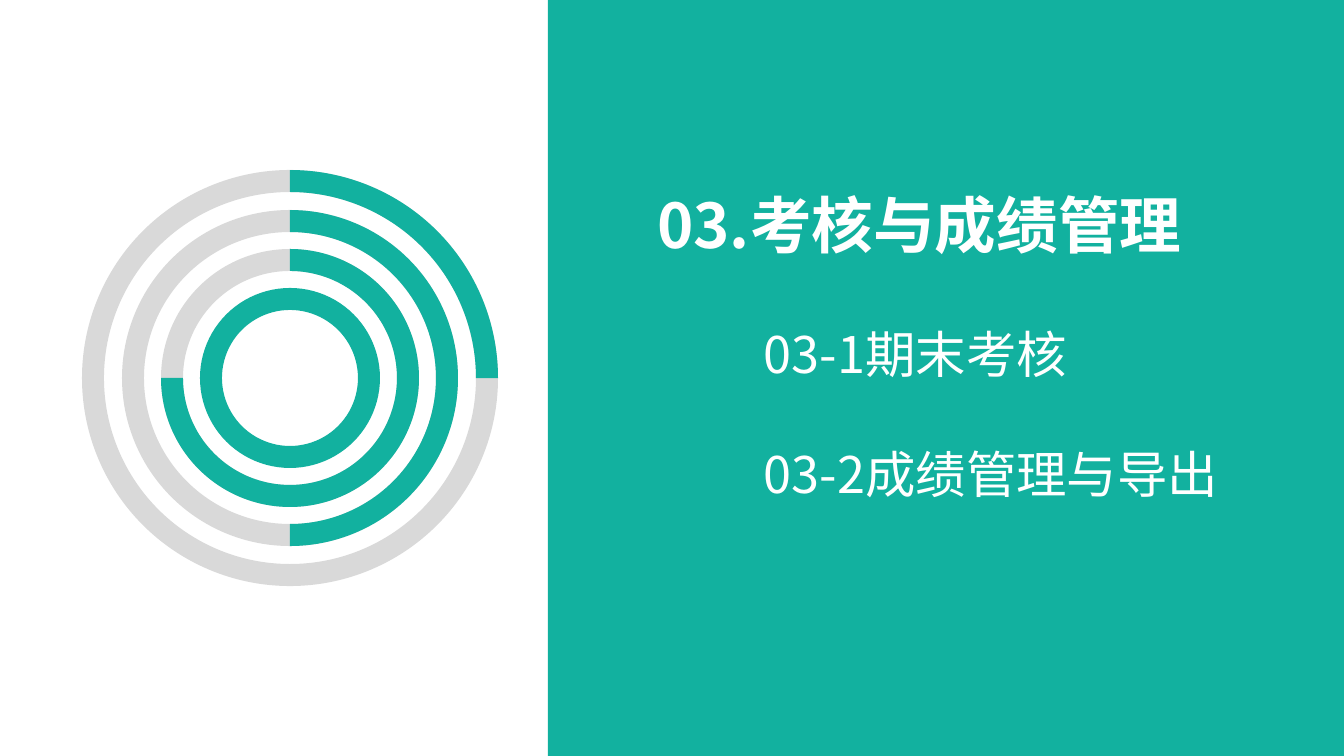
from dataclasses import dataclass

from lxml import etree
from pptx import Presentation
from pptx.dml.color import RGBColor
from pptx.enum.shapes import MSO_SHAPE
from pptx.enum.text import PP_ALIGN
from pptx.oxml.ns import qn
from pptx.util import Emu, Pt

RECT = MSO_SHAPE.RECTANGLE
DONUT = MSO_SHAPE.DONUT
ARC = MSO_SHAPE.BLOCK_ARC
LEFT, CENTER = PP_ALIGN.LEFT, PP_ALIGN.CENTER

SCALE = 914400 / 100.8  # EMU in one px
WIDTH, HEIGHT = 1344, 756
SPLIT = 548
HUB_X, HUB_Y = 290, 378
BAND = 22
TEAL, GREY, WHITE = "12B19F", "D9D9D9", "FFFFFF"
FONT = "Noto Sans CJK SC"


@dataclass
class Ring:
    radius: int
    sweep: int  # degrees filled, clockwise from the top


@dataclass
class Label:
    left: int
    top: int
    width: int
    height: int
    lines: list[str]
    size: int
    pitch: int  # line height in points
    gap: int = 0  # points between paragraphs
    bold: bool = False
    align: PP_ALIGN = LEFT


RINGS = [Ring(208, 90), Ring(168, 180), Ring(129, 270), Ring(90, 360)]
LABELS = [
    Label(754, 318, 590, 194, ["03-1期末考核", "03-2成绩管理与导出"], 36, 43, gap=43),
    Label(577, 182, 685, 85, ["03.考核与成绩管理"], 44, 53, bold=True, align=CENTER),
]


def px(value: int) -> Emu:
    return Emu(round(value * SCALE))


def color(code: str) -> RGBColor:
    return RGBColor.from_string(code)


def add_form(slide, kind, left: int, top: int, width: int, height: int, fill: str):
    form = slide.shapes.add_shape(kind, px(left), px(top), px(width), px(height))
    form.shadow.inherit = False
    form.fill.solid()
    form.fill.fore_color.rgb = color(fill)
    form.line.fill.background()
    return form


def add_ring(slide, ring: Ring) -> None:
    side = 2 * ring.radius
    box = (HUB_X - ring.radius, HUB_Y - ring.radius, side, side)
    full = ring.sweep == 360
    base = add_form(slide, DONUT, *box, TEAL if full else GREY)
    base.adjustments[0] = BAND / side
    if not full:
        arc = add_form(slide, ARC, *box, TEAL)
        # Angles are stored in 60000ths of a degree, adjustments in 100000ths
        arc.adjustments[0] = 270 * 0.6
        arc.adjustments[1] = (270 + ring.sweep) % 360 * 0.6
        arc.adjustments[2] = BAND / side


def add_label(slide, label: Label) -> None:
    box = slide.shapes.add_textbox(
        px(label.left), px(label.top), px(label.width), px(label.height)
    )
    frame = box.text_frame
    frame.word_wrap = True
    frame.text = "\n".join(label.lines)
    for index, para in enumerate(frame.paragraphs):
        para.alignment = label.align
        para.line_spacing = Pt(label.pitch)
        para.space_before = Pt(label.gap if index else 0)
        for run in para.runs:
            run.font.size = Pt(label.size)
            run.font.bold = label.bold
            run.font.color.rgb = color(WHITE)
            run.font.name = FONT
            # East Asian typeface
            props = run._r.get_or_add_rPr()
            etree.SubElement(props, qn("a:ea")).set("typeface", FONT)


def main() -> None:
    deck = Presentation()
    deck.slide_width, deck.slide_height = px(WIDTH), px(HEIGHT)
    slide = deck.slides.add_slide(deck.slide_layouts[6])

    # Right panel
    add_form(slide, RECT, SPLIT, 0, WIDTH - SPLIT, HEIGHT, TEAL)

    # Progress rings
    for ring in RINGS:
        add_ring(slide, ring)

    # Section title and topics
    for label in LABELS:
        add_label(slide, label)

    deck.save("out.pptx")


if __name__ == "__main__":
    main()
